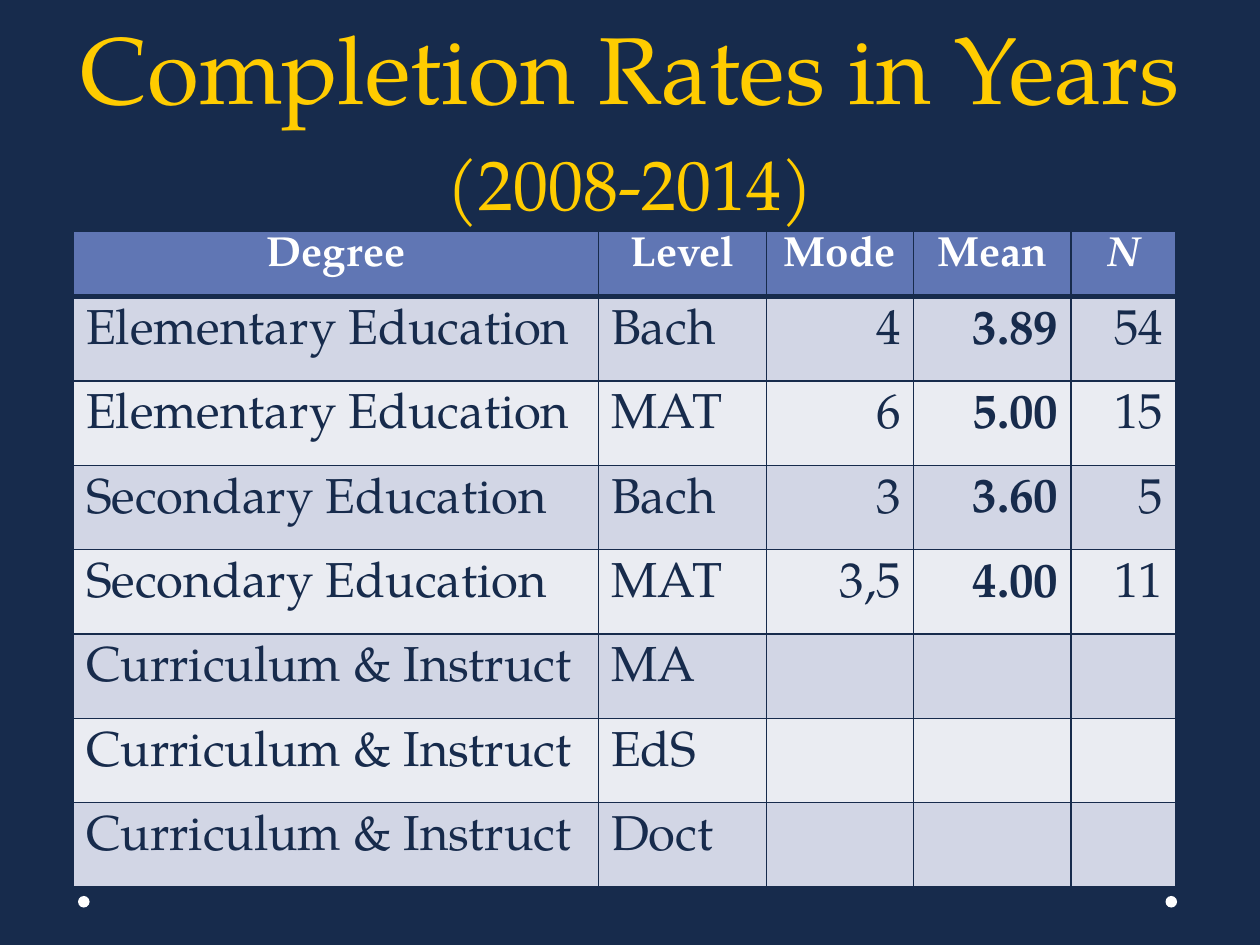
from lxml import etree
from pptx import Presentation
from pptx import util as u
from pptx.dml.color import RGBColor
from pptx.enum import shapes, text
from pptx.oxml import ns

FONT = "TeX Gyre Pagella"
NAVY, WHITE, GOLD, BLUE = "172B4C", "FFFFFF", "FFCC00", "6076B4"
BANDS = ["D2D6E5", "EAECF2"]
LEFT, CENTER, RIGHT = text.PP_ALIGN.LEFT, text.PP_ALIGN.CENTER, text.PP_ALIGN.RIGHT


def color(target, value):
    """Give a fill or a font a solid colour from a hex string."""
    if hasattr(target, "solid"):
        target.solid()
        target.fore_color.rgb = RGBColor.from_string(value)
    else:
        target.color.rgb = RGBColor.from_string(value)


def write(para, words, value, **font):
    """Add a span of text to a paragraph with the given font values."""
    span = para.add_run()
    span.text = words
    for name, setting in {"name": FONT, **font}.items():
        setattr(span.font, name, setting)
    color(span.font, value)


deck = Presentation()
deck.slide_width, deck.slide_height = u.Pt(720), u.Pt(540)
page = deck.slides.add_slide(deck.slide_layouts[5])
color(page.background.fill, NAVY)

# Corner dots
for left in (666, 44.6):
    dot = page.shapes.add_shape(
        shapes.MSO_SHAPE.OVAL, u.Pt(left), u.Pt(512), u.Pt(6.6), u.Pt(6.6))
    dot.shadow.inherit = False
    color(dot.fill, WHITE)
    dot.line.fill.background()

# Title
title = page.shapes.title
title.left, title.top, title.width, title.height = map(u.Pt, (36, 48, 648, 84))
frame = title.text_frame
frame.auto_size = text.MSO_AUTO_SIZE.NONE
frame.word_wrap = True
frame.vertical_anchor = text.MSO_ANCHOR.BOTTOM
para = frame.paragraphs[0]
para.alignment = CENTER
para.line_spacing = u.Pt(58)
write(para, "Completion Rates in Years", GOLD, size=u.Pt(54))
para.add_line_break()
write(para, "(2008-2014)", GOLD, size=u.Pt(40))

# Completion table
rows = [
    ["Degree", "Level", "Mode", "Mean", "N"],
    ["Elementary Education", "Bach", "4", "3.89", "54"],
    ["Elementary Education", "MAT", "6", "5.00", "15"],
    ["Secondary Education", "Bach", "3", "3.60", "5"],
    ["Secondary Education", "MAT", "3,5", "4.00", "11"],
    ["Curriculum & Instruct", "MA", "", "", ""],
    ["Curriculum & Instruct", "EdS", "", "", ""],
    ["Curriculum & Instruct", "Doct", "", "", ""],
]
widths = [300, 96, 84, 90, 60]
heights = [37.5] + [48.2] * 7
table = page.shapes.add_table(
    len(rows), len(widths), u.Pt(42), u.Pt(132),
    u.Pt(sum(widths)), u.Pt(sum(heights))).table
for column, width in zip(table.columns, widths):
    column.width = u.Pt(width)
for row, height in zip(table.rows, heights):
    row.height = u.Pt(height)

for r, values in enumerate(rows):
    header = r == 0
    for c, words in enumerate(values):
        cell = table.cell(r, c)
        cell.margin_left = cell.margin_right = u.Pt(7.2)
        cell.margin_top = cell.margin_bottom = u.Pt(3)

        # Borders come before the fill in the cell properties
        props = cell._tc.get_or_add_tcPr()
        for side in "LRTB":
            thick = (r, side) in ((0, "B"), (1, "T"))
            edge = etree.SubElement(
                props, ns.qn(f"a:ln{side}"), w=str(u.Pt(3 if thick else 1)))
            solid = etree.SubElement(edge, ns.qn("a:solidFill"))
            etree.SubElement(solid, ns.qn("a:srgbClr"), val=NAVY)
        color(cell.fill, BLUE if header else BANDS[(r - 1) % 2])

        if not words:
            continue
        para = cell.text_frame.paragraphs[0]
        para.alignment = CENTER if header else LEFT if c < 2 else RIGHT
        if not header:
            para.line_spacing = 1.15
        write(para, words, WHITE if header else NAVY,
              size=u.Pt(24 if header else 28),
              bold=header or c == 3, italic=words == "N")

deck.save("out.pptx")
